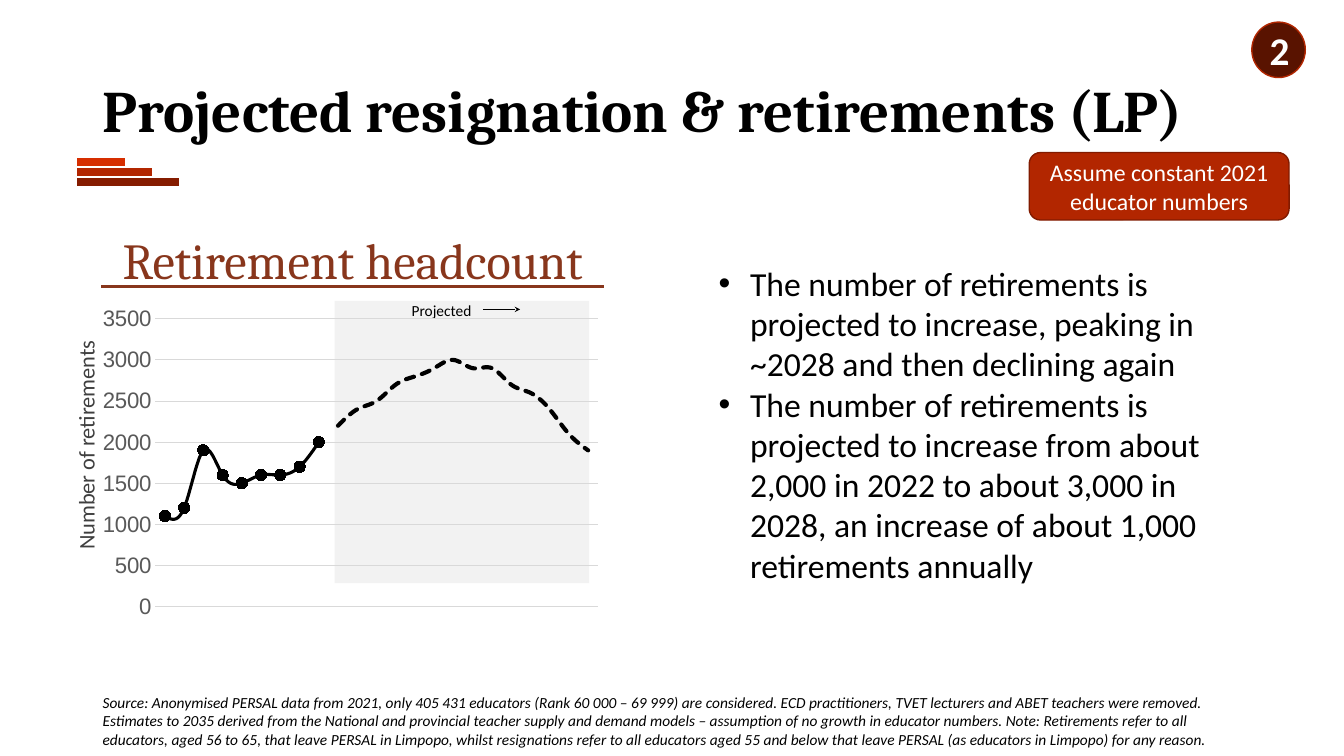
from dataclasses import dataclass

from lxml import etree
from pptx import Presentation
from pptx.chart.data import CategoryChartData
from pptx.dml.color import RGBColor
from pptx.enum.chart import XL_CHART_TYPE, XL_MARKER_STYLE, XL_TICK_LABEL_POSITION, XL_TICK_MARK
from pptx.enum.dml import MSO_LINE
from pptx.enum.shapes import MSO_CONNECTOR, MSO_SHAPE
from pptx.enum.text import MSO_ANCHOR, PP_ALIGN
from pptx.oxml import parse_xml
from pptx.oxml.ns import nsdecls, qn
from pptx.util import Pt

LEFT, CENTER = PP_ALIGN.LEFT, PP_ALIGN.CENTER
TOP, MIDDLE = MSO_ANCHOR.TOP, MSO_ANCHOR.MIDDLE
RECT, ROUNDED, OVAL = MSO_SHAPE.RECTANGLE, MSO_SHAPE.ROUNDED_RECTANGLE, MSO_SHAPE.OVAL
STRAIGHT = MSO_CONNECTOR.STRAIGHT
LINE_CHART = XL_CHART_TYPE.LINE_MARKERS
NO_TICK, NO_LABELS = XL_TICK_MARK.NONE, XL_TICK_LABEL_POSITION.NONE
NO_MARKER, CIRCLE = XL_MARKER_STYLE.NONE, XL_MARKER_STYLE.CIRCLE
DASHED = MSO_LINE.SQUARE_DOT


@dataclass(frozen=True)
class Theme:
    heading: str = "Cambria"
    body: str = "Calibri"
    chart: str = "Arial"
    black: str = "000000"
    white: str = "FFFFFF"
    brown: str = "88361C"
    red: str = "B22600"
    bright_red: str = "D62E00"
    dark_red: str = "851C00"
    box_line: str = "811B00"
    badge: str = "591300"
    band: str = "BFBFBF"
    grid: str = "D9D9D9"
    tick: str = "595959"
    axis_title: str = "3F3F3F"
    title_size: int = 42
    heading_size: int = 36
    badge_size: int = 28
    body_size: int = 24
    callout_size: int = 17
    chart_size: int = 16
    small_size: int = 11


T = Theme()
BULLETS = [
    "The number of retirements is projected to increase, peaking in ~2028 and then declining again",
    "The number of retirements is projected to increase from about 2,000 in 2022 to about 3,000 "
    "in 2028, an increase of about 1,000 retirements annually",
]
SOURCE = (
    "Source: Anonymised PERSAL data from 2021, only 405 431 educators (Rank 60 000 – 69 999) are "
    "considered. ECD practitioners, TVET lecturers and ABET teachers were removed. Estimates to 2035 "
    "derived from the National and provincial teacher supply and demand models – assumption of no "
    "growth in educator numbers. Note: Retirements refer to all educators, aged 56 to 65, that leave "
    "PERSAL in Limpopo, whilst resignations refer to all educators aged 55 and below that leave PERSAL "
    "(as educators in Limpopo) for any reason."
)
ACTUAL = [1100, 1200, 1900, 1600, 1500, 1600, 1600, 1700, 2000]
PROJECTED = [2200, 2400, 2500, 2700, 2800, 2900, 3000, 2900, 2900, 2700, 2600, 2400, 2100, 1900]


def rgb(color):
    return RGBColor.from_string(color)


def style_font(font, size, color, name=T.body, bold=False, italic=False):
    font.name, font.size, font.bold, font.italic = name, Pt(size), bold, italic
    font.color.rgb = rgb(color)


def write(sp, texts, size, color=T.black, align=LEFT, anchor=TOP, insets=(7.2, 3.6, 7.2, 3.6), **font):
    tf = sp.text_frame
    tf.word_wrap = True
    tf.vertical_anchor = anchor
    tf.margin_left, tf.margin_top, tf.margin_right, tf.margin_bottom = map(Pt, insets)
    for i, text in enumerate(texts):
        p = tf.add_paragraph() if i else tf.paragraphs[0]
        p.alignment = align
        r = p.add_run()
        r.text = text
        style_font(r.font, size, color, **font)


def add_text(s, box, texts, size, **options):
    sp = s.shapes.add_textbox(*map(Pt, box))
    write(sp, texts, size, **options)
    return sp


def add_box(s, kind, box, fill, line=None):
    sp = s.shapes.add_shape(kind, *map(Pt, box))
    sp.shadow.inherit = False
    sp.fill.solid()
    sp.fill.fore_color.rgb = rgb(fill)
    if line:
        sp.line.color.rgb = rgb(line)
        sp.line.width = Pt(1)
    else:
        sp.line.fill.background()
    return sp


def add_line(s, x1, x2, y, color, width, arrow=False):
    ln = s.shapes.add_connector(STRAIGHT, Pt(x1), Pt(y), Pt(x2), Pt(y))
    ln.line.color.rgb = rgb(color)
    ln.line.width = Pt(width)
    if arrow:
        etree.SubElement(ln.line._get_or_add_ln(), qn("a:tailEnd"), type="stealth", w="sm", len="sm")
    etree.SubElement(ln._element.spPr, qn("a:effectLst"))


def add_bullets(sp):
    for p in sp.text_frame.paragraphs:
        pPr = p._p.get_or_add_pPr()
        pPr.set("marL", str(Pt(22.5)))
        pPr.set("indent", str(-Pt(22.5)))
        etree.SubElement(pPr, qn("a:buFont"), typeface="Arial")
        etree.SubElement(pPr, qn("a:buChar"), char="•")


def set_plot_area(chart, x, y, w, h):
    plot_area = chart._chartSpace.chart.plotArea
    for old in plot_area.findall(qn("c:layout")):
        plot_area.remove(old)
    sizes = "".join(f'<c:{tag} val="{val}"/>' for tag, val in zip("xywh", (x, y, w, h)))
    plot_area.insert(0, parse_xml(
        f'<c:layout {nsdecls("c")}><c:manualLayout><c:layoutTarget val="inner"/>'
        f'<c:xMode val="edge"/><c:yMode val="edge"/>{sizes}</c:manualLayout></c:layout>'))


def style_series(series, width, dash=None, marker=NO_MARKER):
    series.smooth = True
    line = series.format.line
    line.color.rgb = rgb(T.black)
    line.width = Pt(width)
    line._get_or_add_ln().set("cap", "rnd")
    if dash:
        line.dash_style = dash
    series.marker.style = marker
    if marker != NO_MARKER:
        series.marker.size = 8
        series.marker.format.fill.solid()
        series.marker.format.fill.fore_color.rgb = rgb(T.black)
        series.marker.format.line.color.rgb = rgb(T.black)


def add_retirement_chart(s, box):
    data = CategoryChartData()
    data.categories = [str(year) for year in range(2013, 2036)]
    data.add_series("Series 1", [None] * len(ACTUAL) + PROJECTED)
    data.add_series("Series 2", ACTUAL + [None] * len(PROJECTED))
    chart = s.shapes.add_chart(LINE_CHART, *map(Pt, box), data).chart
    chart.has_title = chart.has_legend = False
    style_font(chart.font, T.chart_size, T.black, T.chart)
    chart.plots[0].vary_by_categories = False
    set_plot_area(chart, 0.096, 0.05, 0.89, 0.804)

    years, counts = chart.category_axis, chart.value_axis
    for axis in (years, counts):
        axis.major_tick_mark = axis.minor_tick_mark = NO_TICK
        style_font(axis.tick_labels.font, T.chart_size, T.tick, T.chart)
    years.tick_label_position = NO_LABELS
    counts.minimum_scale, counts.maximum_scale, counts.major_unit = 0, 3500, 500
    counts.format.line.fill.background()
    for line in (years.format.line, counts.major_gridlines.format.line):
        line.color.rgb = rgb(T.grid)
        line.width = Pt(0.75)

    projected, actual = chart.plots[0].series
    style_series(projected, 3, dash=DASHED)
    style_series(actual, 2.25, marker=CIRCLE)


def main():
    prs = Presentation()
    prs.slide_width, prs.slide_height = Pt(960), Pt(540)
    s = prs.slides.add_slide(prs.slide_layouts[6])

    # Title with stepped accent bars
    for i, (right, color) in enumerate([(89.6, T.bright_red), (108.4, T.red), (127.8, T.dark_red)]):
        add_line(s, 55.1, right, 115.6 + 7.2 * i, color, 5.5)
    title = add_text(s, (66.2, 28.8, 828, 104.4), ["Projected resignation & retirements (LP)"],
                     T.title_size, anchor=MIDDLE, name=T.heading, bold=True)
    title.text_frame.paragraphs[0].line_spacing = 0.9

    # Chart heading
    add_line(s, 72.5, 431.3, 204.5, T.brown, 2.25)
    add_text(s, (72.7, 164.9, 358.6, 41), ["Retirement headcount"], T.heading_size,
             color=T.brown, align=CENTER, anchor=MIDDLE, name=T.heading)

    # Assumption callout and findings
    callout = add_box(s, ROUNDED, (735.2, 109, 185.6, 48.2), T.red, T.box_line)
    write(callout, ["Assume constant 2021 educator numbers"], T.callout_size,
          color=T.white, align=CENTER, anchor=MIDDLE)
    add_bullets(add_text(s, (506.2, 183.9, 388, 294.5), BULLETS, T.body_size))

    # Projection band behind the chart
    band = add_box(s, RECT, (239, 215, 181.8, 201.6), T.band)
    color = band.fill._xPr.find(qn("a:solidFill"))[0]
    etree.SubElement(color, qn("a:alpha"), val="20000")
    write(band, ["Projected"], T.small_size, align=CENTER, insets=(7.2, 0, 36, 0))
    add_line(s, 344.9, 371.5, 221, T.black, 0.75, arrow=True)

    # Retirement chart with its axis title
    axis_title = add_text(s, (-50.4, 305.3, 223.2, 25.2), ["Number of retirements"], T.chart_size,
                          color=T.axis_title, align=CENTER, anchor=MIDDLE)
    axis_title.rotation = 270
    add_retirement_chart(s, (73.4, 215, 358.6, 255.6))

    # Number badge and source note
    badge = add_box(s, OVAL, (894.2, 15.8, 38.2, 39.6), T.badge, T.red)
    write(badge, ["2"], T.badge_size, color=T.white, align=CENTER, anchor=MIDDLE, bold=True)
    add_text(s, (66.2, 491.4, 828, 41), [SOURCE], T.small_size, italic=True)

    prs.save("out.pptx")


if __name__ == "__main__":
    main()
